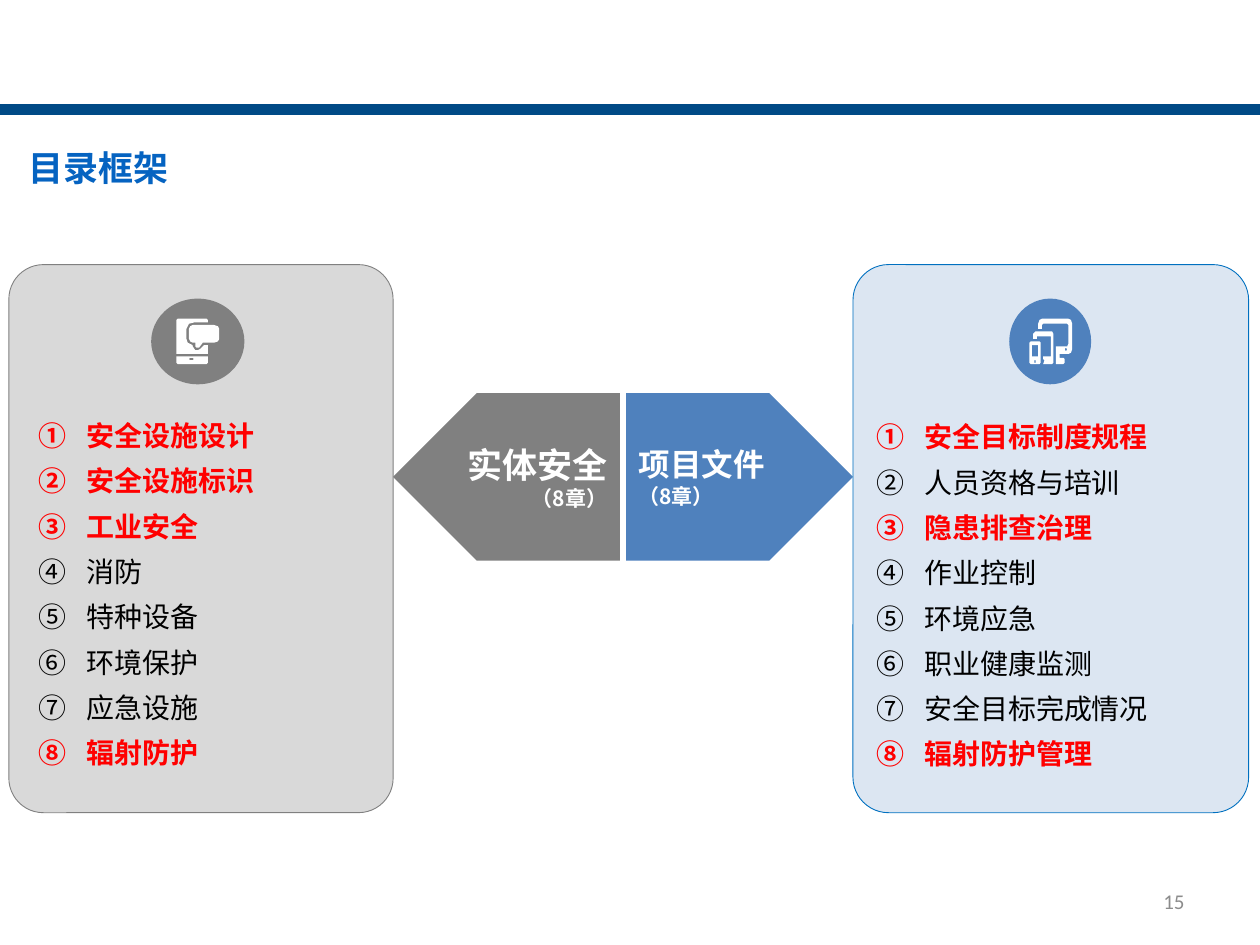
from lxml import etree
from pptx import Presentation
from pptx.dml.color import RGBColor
from pptx.enum import shapes, text
from pptx.oxml.ns import qn
from pptx.util import Inches, Pt

COLORS = {
    "navy": "004A86", "title": "0563C1", "blue": "4F81BD", "pale": "DCE6F2",
    "edge": "0070C0", "gray": "808080", "silver": "D9D9D9", "number": "8C8C8C",
    "red": "FF0000", "black": "000000", "white": "FFFFFF",
}
CJK = "Noto Sans CJK SC"
KIND = shapes.MSO_SHAPE
ALIGN = text.PP_ALIGN

presentation = Presentation()
presentation.slide_width = Inches(10)
presentation.slide_height = Inches(7.5)
slide = presentation.slides.add_slide(presentation.slide_layouts[6])


def style_shape(shape, fill, line=None, width=0.5):
    shape.shadow.inherit = False
    shape.fill.solid()
    shape.fill.fore_color.rgb = RGBColor.from_string(COLORS[fill])
    if line:
        shape.line.color.rgb = RGBColor.from_string(COLORS[line])
        shape.line.width = Pt(width)
    else:
        shape.line.fill.background()


def write_paragraph(paragraph, content, size, color, bold=True, align=ALIGN.LEFT, name=CJK):
    paragraph.text = content
    paragraph.alignment = align
    font = paragraph.font
    font.size = Pt(size)
    font.bold = bold
    font.color.rgb = RGBColor.from_string(COLORS[color])
    font.name = name
    etree.SubElement(font._element, qn("a:ea"), typeface=name)


bar = slide.shapes.add_shape(KIND.RECTANGLE, 0, Inches(0.84), Inches(10), Inches(0.06))
style_shape(bar, "navy", "navy", 2)

arrows = [
    (4.97, "blue", "项目文件", 18, ALIGN.LEFT),
    (3.12, "gray", "实体安全", 20, ALIGN.RIGHT),
]
for left, fill, label, size, align in arrows:
    arrow = slide.shapes.add_shape(KIND.PENTAGON, Inches(left), Inches(3.12), Inches(1.8), Inches(1.33))
    style_shape(arrow, fill)
    frame = arrow.text_frame
    frame.vertical_anchor = text.MSO_ANCHOR.MIDDLE
    frame.word_wrap = align == ALIGN.LEFT
    if align == ALIGN.RIGHT:
        arrow._element.spPr.xfrm.set("flipH", "1")
    write_paragraph(frame.paragraphs[0], label, size, "white", align=align)
    write_paragraph(frame.add_paragraph(), "（8章）", 12, "white", align=align)

phone_icon = [
    [(140, 283), (165, 283), (165, 288), (164, 289), (141, 289), (140, 288)],
    [(150, 285), (151, 284), (153, 284), (154, 285), (153, 286), (151, 286)],
    [(153, 258), (170, 258), (173, 259), (174, 261), (174, 269), (173, 271), (170, 272),
     (161, 272), (158, 276), (156, 276), (155, 275), (155, 272), (153, 272), (151, 271),
     (150, 269), (150, 261), (151, 259)],
    [(141, 253), (164, 253), (165, 254), (165, 256), (154, 256), (150, 257), (148, 261),
     (148, 269), (149, 272), (153, 274), (153, 275), (155, 278), (157, 278), (159, 277),
     (162, 274), (165, 274), (165, 281), (140, 281), (140, 254)],
]
devices_icon = [
    [(818, 271), (825, 271), (826, 272), (826, 288), (825, 289), (818, 289), (817, 288), (817, 272)],
    [(819, 274), (824, 274), (824, 283), (819, 283)],
    [(821, 286), (822, 286), (822, 288), (821, 288)],
    [(822, 263), (835, 263), (836, 265), (836, 288), (835, 289), (828, 289), (829, 286),
     (828, 285), (828, 283), (834, 283), (834, 267), (823, 267), (823, 269), (820, 269),
     (820, 265)],
    [(827, 253), (848, 253), (850, 254), (851, 257), (851, 277), (850, 280), (848, 281),
     (841, 281), (841, 284), (844, 284), (845, 285), (845, 288), (844, 289), (838, 289),
     (838, 275), (847, 275), (848, 273), (848, 258), (847, 257), (828, 257), (827, 258),
     (827, 261), (824, 261), (824, 257), (825, 254)],
    [(846, 276), (847, 277), (846, 279), (845, 277)],
]
panels = [
    (0.07, 3.05, "silver", "gray", (1.2, 0.74, "gray"), phone_icon, (0.21, 3.18, 2.75),
     ["安全设施设计", "安全设施标识", "工业安全", "消防", "特种设备", "环境保护", "应急设施", "辐射防护"],
     {1, 2, 3, 8}),
    (6.77, 3.14, "pale", "edge", (8.01, 0.65, "blue"), devices_icon, (6.86, 3.19, 2.96),
     ["安全目标制度规程", "人员资格与培训", "隐患排查治理", "作业控制", "环境应急", "职业健康监测",
      "安全目标完成情况", "辐射防护管理"],
     {1, 3, 8}),
]
for left, width, fill, line, badge, icon, listing, chapters, highlighted in panels:
    panel = slide.shapes.add_shape(KIND.ROUNDED_RECTANGLE, Inches(left), Inches(2.1), Inches(width), Inches(4.35))
    panel.adjustments[0] = 0.09
    style_shape(panel, fill, line)

    badge_left, badge_width, badge_fill = badge
    circle = slide.shapes.add_shape(KIND.OVAL, Inches(badge_left), Inches(2.37), Inches(badge_width), Inches(0.68))
    style_shape(circle, badge_fill)

    builder = slide.shapes.build_freeform(*icon[0][0], scale=Inches(0.01))
    for index, contour in enumerate(icon):
        if index:
            builder.move_to(*contour[0])
        builder.add_line_segments(contour[1:], close=True)
    style_shape(builder.convert_to_shape(), "white")

    list_left, list_top, list_width = listing
    box = slide.shapes.add_textbox(Inches(list_left), Inches(list_top), Inches(list_width), Inches(3.08))
    frame = box.text_frame
    frame.word_wrap = True
    for number, chapter in enumerate(chapters, 1):
        paragraph = frame.paragraphs[0] if number == 1 else frame.add_paragraph()
        properties = paragraph._p.get_or_add_pPr()
        properties.set("marL", str(Inches(0.38)))
        properties.set("indent", str(-Inches(0.38)))
        etree.SubElement(properties, qn("a:buFont"), typeface="+mj-ea")
        etree.SubElement(properties, qn("a:buAutoNum"), type="circleNumDbPlain")
        paragraph.line_spacing = 1.35
        strong = number in highlighted
        write_paragraph(paragraph, chapter, 16, "red" if strong else "black", strong)

title = slide.shapes.add_textbox(Inches(0.12), Inches(1.11), Inches(1.32), Inches(0.44))
title.text_frame.word_wrap = False
title.text_frame.auto_size = text.MSO_AUTO_SIZE.SHAPE_TO_FIT_TEXT
write_paragraph(title.text_frame.paragraphs[0], "目录框架", 20, "title", align=ALIGN.CENTER)

page_number = slide.shapes.add_textbox(Inches(7.17), Inches(6.95), Inches(2.33), Inches(0.4))
page_number.text_frame.word_wrap = True
page_number.text_frame.vertical_anchor = text.MSO_ANCHOR.MIDDLE
write_paragraph(page_number.text_frame.paragraphs[0], "15", 12, "number", False, ALIGN.RIGHT, "Calibri")

presentation.save("out.pptx")
